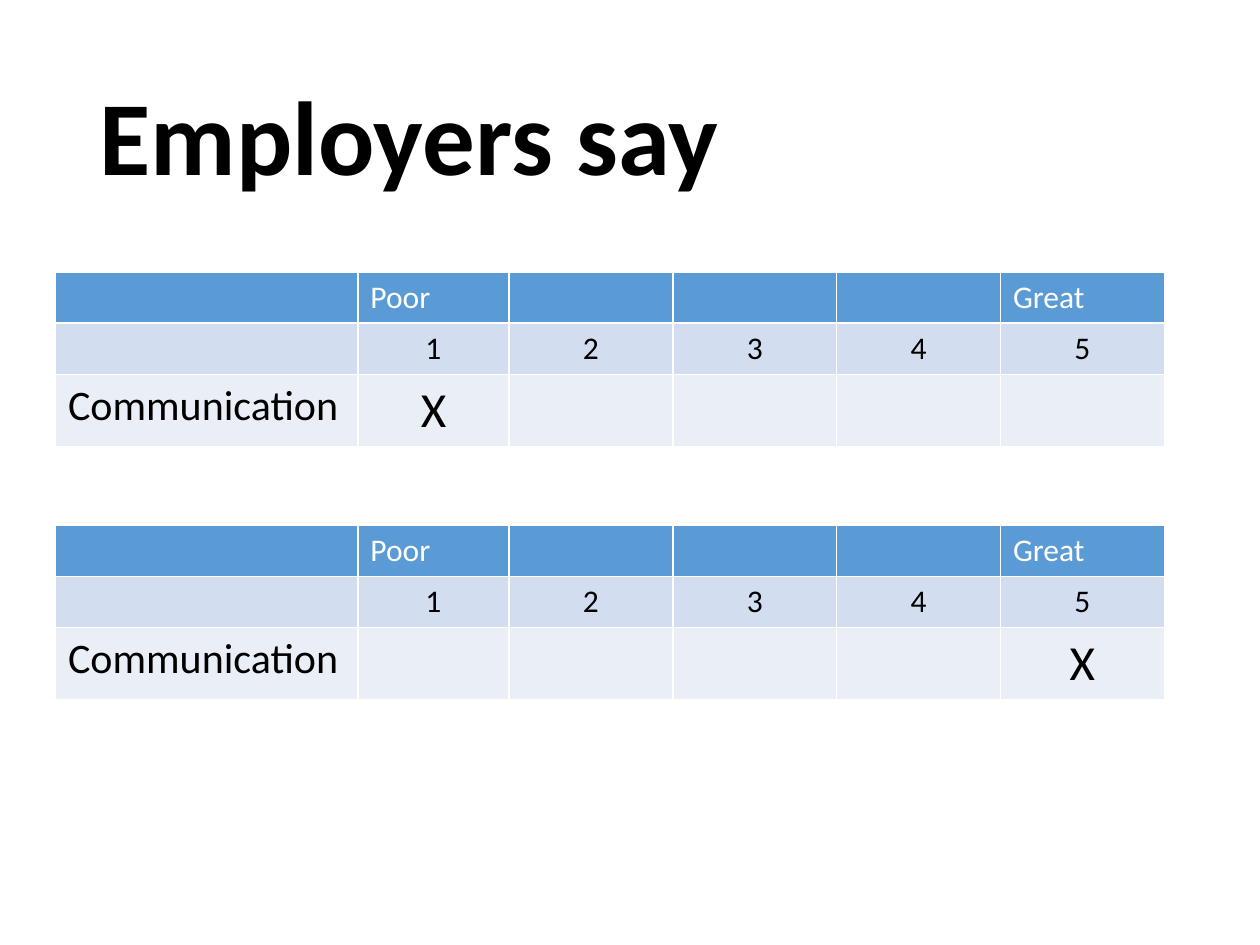
"""Build the "Employers say" slide with two communication rating tables."""
from pptx import Presentation
from pptx import util as u
from pptx.dml import color
from pptx.enum import text

COLORS = {"header": "5B9BD5", "scale": "D2DEEF", "rating": "EAEFF7",
          "white": "FFFFFF", "black": "000000"}
COL_WIDTHS = [2.4, 1.2, 1.3, 1.3, 1.3, 1.3]
ROW_HEIGHTS = [0.4, 0.4, 0.57]
ROW_STYLES = [("header", "white"), ("scale", "black"), ("rating", "black")]
SIZES = {"Communication": 24, "X": 28}
LEFT_ALIGNED = ["Poor", "Great", "Communication"]


def add_run(p, words, size, ink, bold=False):
    r = p.add_run()
    r.text = words
    r.font.name = "Calibri"
    r.font.size = u.Pt(size)
    r.font.bold = bold
    r.font.color.rgb = color.RGBColor.from_string(COLORS[ink])


prs = Presentation()
prs.slide_width, prs.slide_height = u.Inches(10), u.Inches(7.5)
s = prs.slides.add_slide(prs.slide_layouts[5])

title = s.shapes.title
title.left, title.top = u.Inches(0.69), u.Inches(0.4)
title.width, title.height = u.Inches(8.62), u.Inches(1.45)
tf = title.text_frame
tf.vertical_anchor = text.MSO_ANCHOR.MIDDLE
p = tf.paragraphs[0]
p.alignment = text.PP_ALIGN.LEFT
p.line_spacing = 0.9
add_run(p, "Employers say", 60, "black", bold=True)

for top, score in [(2.16, 1), (4.17, 5)]:
    marks = ["X" if n == score else "" for n in range(1, 6)]
    rows = [["", "Poor", "", "", "", "Great"],
            ["", "1", "2", "3", "4", "5"],
            ["Communication", *marks]]
    table = s.shapes.add_table(
        len(rows), len(COL_WIDTHS), u.Inches(0.44), u.Inches(top),
        u.Inches(sum(COL_WIDTHS)), u.Inches(sum(ROW_HEIGHTS))).table
    for col, width in zip(table.columns, COL_WIDTHS):
        col.width = u.Inches(width)
    for i, (fill, ink) in enumerate(ROW_STYLES):
        table.rows[i].height = u.Inches(ROW_HEIGHTS[i])
        for j, words in enumerate(rows[i]):
            cell = table.cell(i, j)
            cell.fill.solid()
            cell.fill.fore_color.rgb = color.RGBColor.from_string(COLORS[fill])
            if words:
                p = cell.text_frame.paragraphs[0]
                if words not in LEFT_ALIGNED:
                    p.alignment = text.PP_ALIGN.CENTER
                add_run(p, words, SIZES.get(words, 18), ink)

prs.save("out.pptx")
